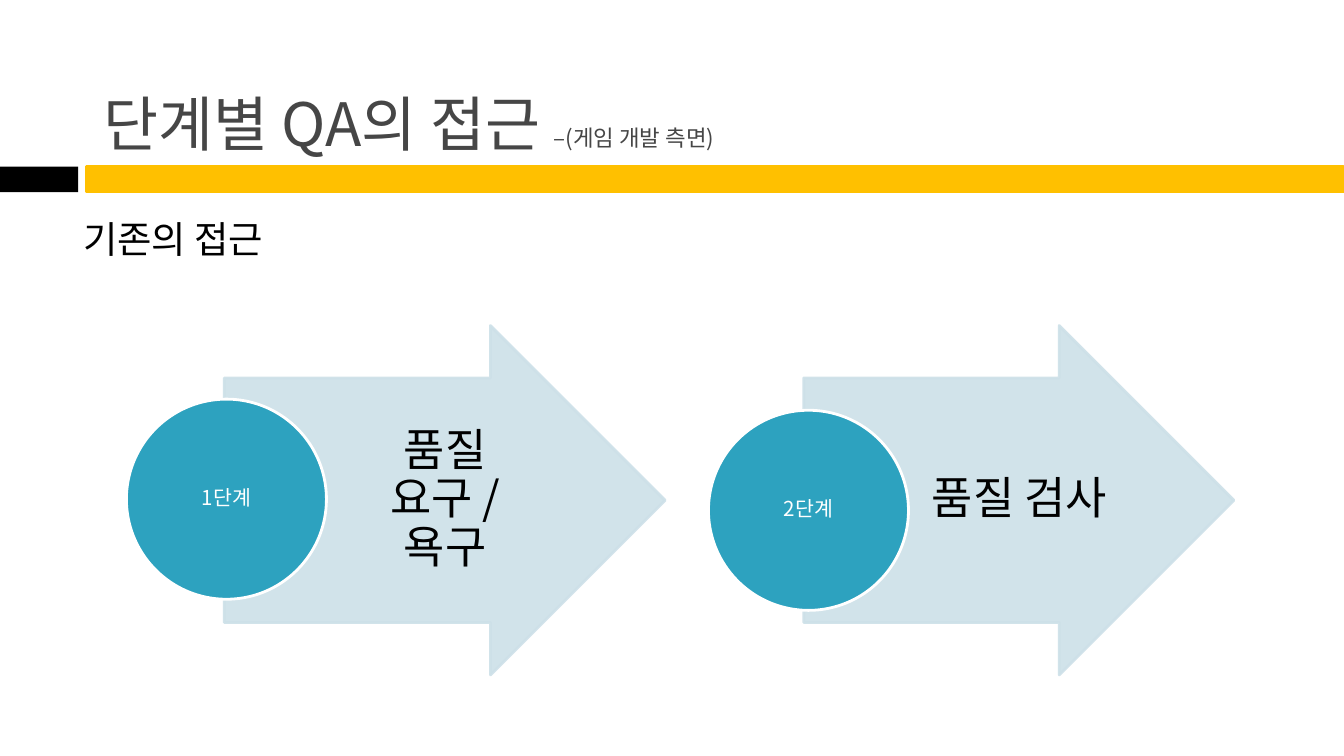
from lxml import etree
from pptx import Presentation
from pptx.dml.color import RGBColor
from pptx.enum.shapes import MSO_SHAPE
from pptx.enum.text import MSO_ANCHOR, MSO_AUTO_SIZE, PP_ALIGN
from pptx.oxml.ns import qn
from pptx.util import Cm, Pt

RECTANGLE = MSO_SHAPE.RECTANGLE
ARROW = MSO_SHAPE.RIGHT_ARROW
CIRCLE = MSO_SHAPE.OVAL
TOP, MIDDLE, BOTTOM = MSO_ANCHOR.TOP, MSO_ANCHOR.MIDDLE, MSO_ANCHOR.BOTTOM
LEFT, CENTER = PP_ALIGN.LEFT, PP_ALIGN.CENTER
NO_FIT = MSO_AUTO_SIZE.NONE

FONT = "Noto Sans CJK KR"
COLORS = {
    "title": "464646",
    "text": "000000",
    "accent": "FFC000",
    "tab": "000000",
    "arrow": "CDE0E8",
    "circle": "2DA2BF",
    "white": "FFFFFF",
}

ARROW_TOP, ARROW_HEIGHT = 6.15, 6.6
CIRCLE_SIZE = 3.78
# Arrow left and width, circle left and top, in cm
STEPS = [
    ("1단계", "품질 요구 / 욕구", 4.24, 8.33, 2.39, 7.54),
    ("2단계", "품질 검사", 15.19, 8.13, 13.39, 7.75),
]


def rgb(color):
    return RGBColor.from_string(COLORS[color])


def place(shape, left, top, width, height):
    bounds = {"left": left, "top": top, "width": width, "height": height}
    for side, length in bounds.items():
        setattr(shape, side, Cm(length))


def set_frame(frame, anchor, margins=(0.25, 0.13, 0.25, 0.13)):
    left, top, right, bottom = margins
    formats = {
        "word_wrap": True,
        "auto_size": NO_FIT,
        "vertical_anchor": anchor,
        "margin_left": Cm(left),
        "margin_top": Cm(top),
        "margin_right": Cm(right),
        "margin_bottom": Cm(bottom),
    }
    for name, value in formats.items():
        setattr(frame, name, value)


def add_run(paragraph, text, size, color):
    """Add a run whose font covers both Latin and Korean letters."""
    run = paragraph.add_run()
    run.text = text
    for name, value in {"size": Pt(size), "name": FONT, "bold": False}.items():
        setattr(run.font, name, value)
    run.font.color.rgb = rgb(color)
    etree.SubElement(run.font._element, qn("a:ea"), typeface=FONT)


def add_figure(slide, kind, bounds, fill, line=None, opacity=100):
    figure = slide.shapes.add_shape(kind, *map(Cm, bounds))
    figure.shadow.inherit = False
    figure.fill.solid()
    figure.fill.fore_color.rgb = rgb(fill)
    if line:
        figure.line.color.rgb = rgb(line)
        figure.line.width = Pt(1.5)
    else:
        figure.line.fill.background()
    if opacity < 100:
        for color in figure._element.spPr.iter(qn("a:srgbClr")):
            etree.SubElement(color, qn("a:alpha"), val=str(opacity * 1000))
    return figure


def write_label(frame, text, size, color, margins):
    set_frame(frame, MIDDLE, margins)
    paragraph = frame.paragraphs[0]
    paragraph.alignment = CENTER
    paragraph.line_spacing = 0.9
    add_run(paragraph, text, size, color)


def add_step(slide, step, task, left, width, circle_left, circle_top):
    """Draw an arrow with its task and the numbered circle on its tail."""
    arrow = add_figure(slide, ARROW, (left, ARROW_TOP, width, ARROW_HEIGHT),
                       "arrow", "arrow", 90)
    arrow.adjustments[0], arrow.adjustments[1] = 0.7, 0.5

    task_bounds = (left + width / 4, ARROW_TOP + ARROW_HEIGHT * 0.15,
                   width * 0.49, ARROW_HEIGHT * 0.7)
    task_box = slide.shapes.add_textbox(*map(Cm, task_bounds))
    write_label(task_box.text_frame, task, 24, "text", (0.18, 0.05, 0.08, 0.05))

    circle = add_figure(slide, CIRCLE,
                        (circle_left, circle_top, CIRCLE_SIZE, CIRCLE_SIZE),
                        "circle", "white")
    write_label(circle.text_frame, step, 11, "white", (0.02,) * 4)


def fill_title(title):
    place(title, 1.7, 0.33, 22.66, 2.79)
    set_frame(title.text_frame, BOTTOM)
    heading = title.text_frame.paragraphs[0]
    heading.alignment = LEFT
    add_run(heading, "단계별 QA의 접근 ", 32, "title")
    add_run(heading, "–(게임 개발 측면)", 12, "title")


def fill_subtitle(body):
    place(body, 1.32, 3.96, 11.38, 1.78)
    set_frame(body.text_frame, TOP)
    subtitle = body.text_frame.paragraphs[0]
    properties = subtitle._p.get_or_add_pPr()
    properties.set("marL", "0")
    properties.set("indent", "0")
    etree.SubElement(properties, qn("a:buNone"))
    subtitle.alignment = LEFT
    subtitle.space_before = Pt(0)
    add_run(subtitle, "기존의 접근", 20, "text")


def main():
    presentation = Presentation()
    presentation.slide_width, presentation.slide_height = Cm(25.4), Cm(14.28)
    slide = presentation.slides.add_slide(presentation.slide_layouts[1])

    add_figure(slide, RECTANGLE, (1.64, 3.15, 23.76, 0.48), "accent", "accent")
    add_figure(slide, RECTANGLE, (0, 3.15, 1.48, 0.48), "tab")
    fill_title(slide.shapes.title)
    for step in STEPS:
        add_step(slide, *step)
    fill_subtitle(slide.placeholders[1])

    presentation.save("out.pptx")


if __name__ == "__main__":
    main()
